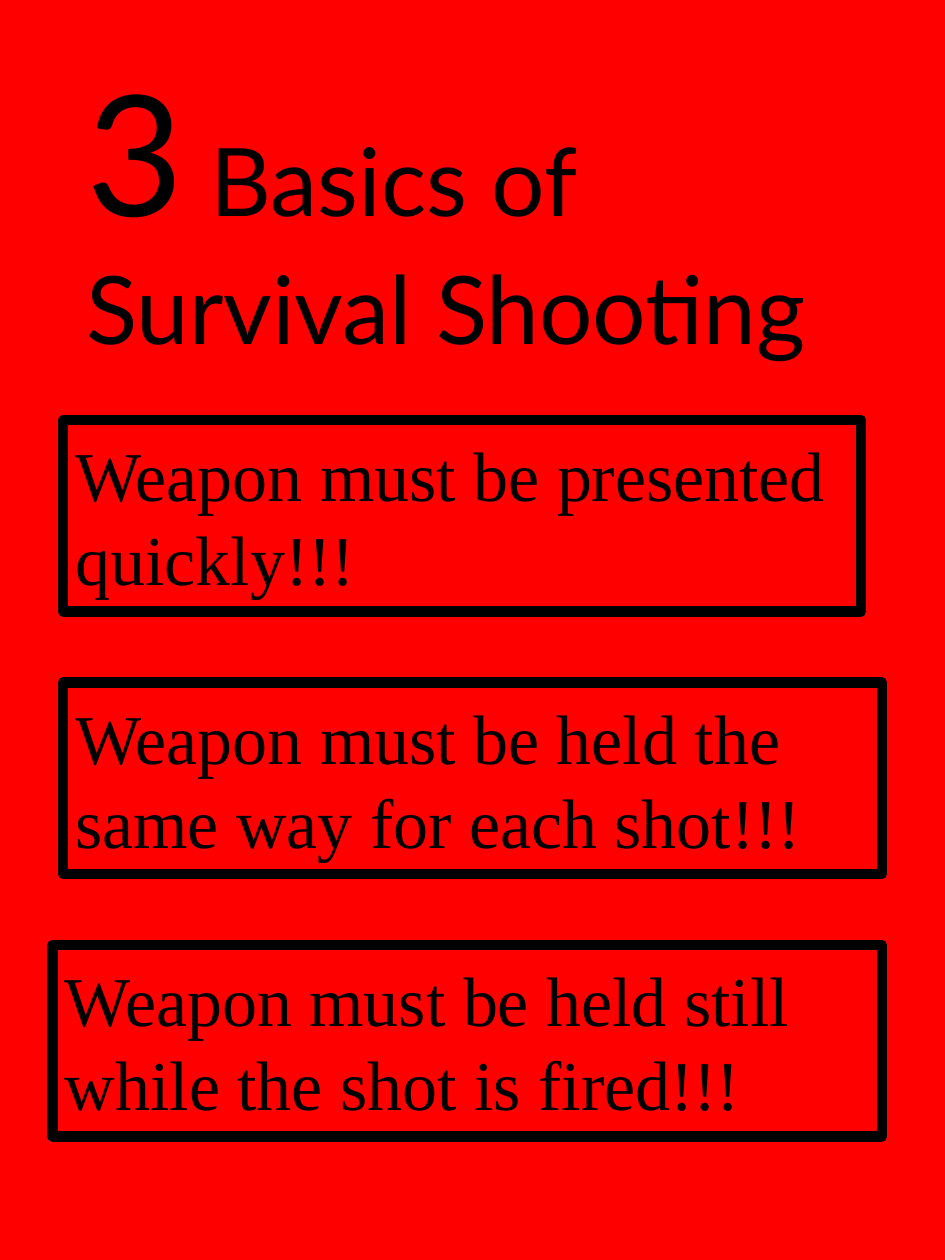
from pptx import Presentation
from pptx.dml.color import RGBColor
from pptx.enum.shapes import MSO_SHAPE
from pptx.enum.text import MSO_ANCHOR, MSO_AUTO_SIZE, PP_ALIGN
from pptx.util import Pt

BLACK = "000000"
RED = "FF0000"


def color(value):
    return RGBColor.from_string(value)


class Poster:
    title_font = "Lato"
    rule_font = "Times New Roman"

    def __init__(self, prs):
        self.s = prs.slides.add_slide(prs.slide_layouts[5])
        fill = self.s.background.fill
        fill.solid()
        fill.fore_color.rgb = color(RED)

    def style(self, tf, font, size):
        tf.word_wrap = True
        tf.auto_size = MSO_AUTO_SIZE.NONE
        tf.vertical_anchor = MSO_ANCHOR.MIDDLE
        p = tf.paragraphs[0]
        p.alignment = PP_ALIGN.LEFT
        p.font.name = font
        p.font.size = Pt(size)
        p.font.color.rgb = color(BLACK)
        return p

    def title(self, left, top, width, height, runs):
        sp = self.s.shapes.title
        sp.left, sp.top, sp.width, sp.height = map(Pt, (left, top, width, height))
        p = self.style(sp.text_frame, self.title_font, 54)
        for text, size in runs:
            r = p.add_run()
            r.text = text
            r.font.size = Pt(size)

    def rule(self, left, top, width, height, text):
        sp = self.s.shapes.add_shape(
            MSO_SHAPE.RECTANGLE, *map(Pt, (left, top, width, height)))
        sp.shadow.inherit = False
        sp.fill.background()
        sp.line.color.rgb = color(BLACK)
        sp.line.width = Pt(6)
        sp.text_frame.text = text
        self.style(sp.text_frame, self.rule_font, 40)


def main():
    prs = Presentation()
    prs.slide_width, prs.slide_height = Pt(540), Pt(720)
    poster = Poster(prs)
    poster.title(42, 24, 468, 187,
                 [("3", 96), (" ", 60), ("Basics of Survival Shooting", 54)])
    rules = [
        (36, 456, "Weapon must be presented quickly!!!"),
        (36, 468, "Weapon must be held the same way for each shot!!!"),
        (30, 474, "Weapon must be held still while the shot is fired!!!"),
    ]
    for i, (left, width, text) in enumerate(rules):
        poster.rule(left, 240 + 150 * i, width, 109.4, text)
    prs.save("out.pptx")


if __name__ == "__main__":
    main()
